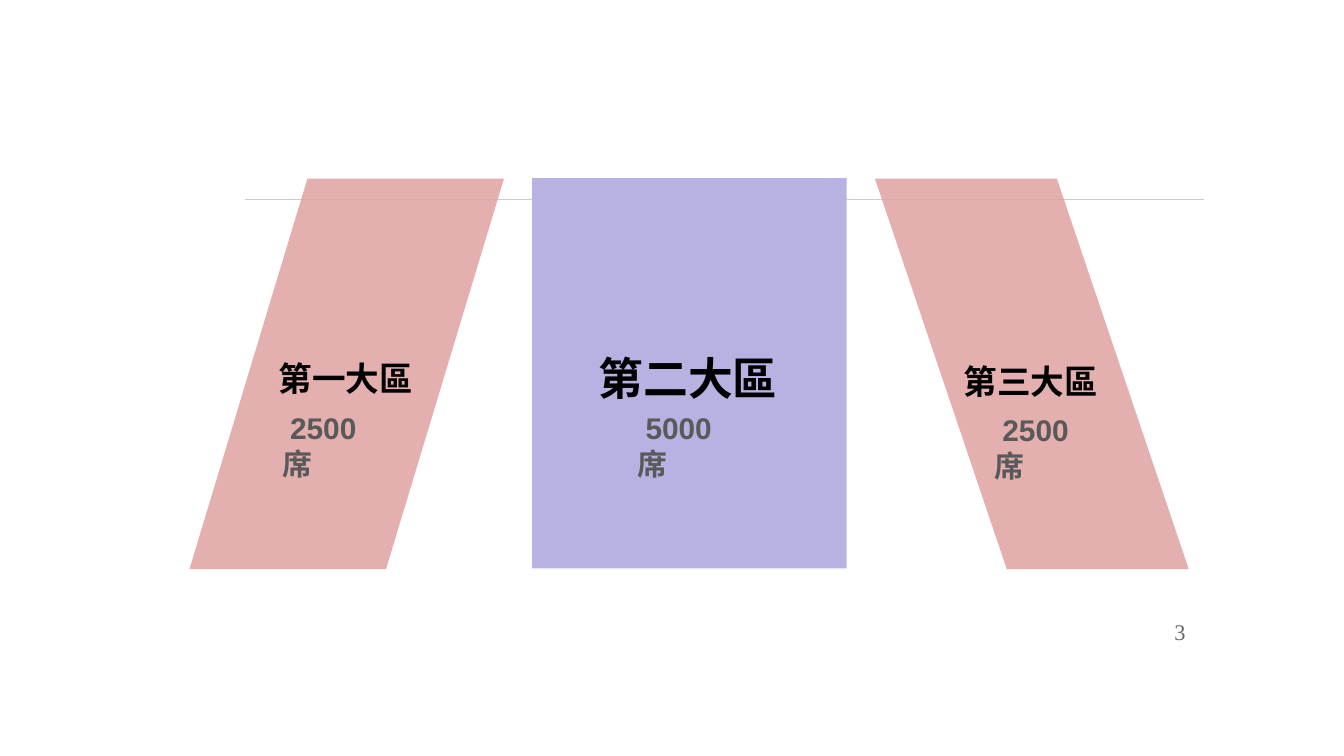
from lxml.etree import SubElement
from pptx import Presentation
from pptx.dml.color import RGBColor
from pptx.enum.shapes import MSO_CONNECTOR, MSO_SHAPE
from pptx.enum.text import MSO_ANCHOR
from pptx.oxml.ns import qn
from pptx.util import Pt

PX = 4572
CJK = "Noto Sans CJK TC"


def px(*lengths):
    return [length * PX for length in lengths]


def color(hex_string):
    return RGBColor.from_string(hex_string)


def add_text(slide, box, words, size, font_name, hex_color, bold=True,
             inset=(20, 10, 20, 10), indent=0, anchor=MSO_ANCHOR.TOP):
    frame = slide.shapes.add_textbox(*px(*box)).text_frame
    frame.word_wrap = True
    frame.vertical_anchor = anchor
    (frame.margin_left, frame.margin_top,
     frame.margin_right, frame.margin_bottom) = px(*inset)
    paragraph = frame.paragraphs[0]
    paragraph.text = words
    properties = paragraph._p.get_or_add_pPr()
    properties.set("marL", "0")
    properties.set("indent", str(indent * PX))
    font = paragraph.font
    font.size, font.bold, font.name = Pt(size), bold, font_name
    font.color.rgb = color(hex_color)
    SubElement(properties.find(qn("a:defRPr")), qn("a:ea"), typeface=CJK)


def add_rule(slide, left, top, width):
    rule = slide.shapes.add_connector(
        MSO_CONNECTOR.STRAIGHT, *px(left, top, left + width, top))
    rule.line.color.rgb = color("CCCCCC")
    rule.line.width = Pt(0.75)
    SubElement(rule._element.spPr, qn("a:effectLst"))


def add_zone(slide, box, preset, fill, name, name_box, name_size,
             seats, seats_box, slant=None, flipped=False, alpha=None):
    left, top = box[:2]
    area = slide.shapes.add_shape(preset, *px(*box))
    area.shadow.inherit = False
    area.line.fill.background()
    area.fill.solid()
    area.fill.fore_color.rgb = color(fill)
    if slant:
        area.adjustments[0] = slant
    if flipped:
        area._element.spPr.xfrm.set("flipV", "1")
    if alpha:
        tint = area._element.spPr.find(qn("a:solidFill"))[0]
        SubElement(tint, qn("a:alpha"), val=str(alpha * 1000))

    def inside(part):
        return (left + part[0], top + part[1], *part[2:])

    add_text(slide, inside(name_box), name, name_size, CJK, "000000")
    add_text(slide, inside(seats_box), seats, 16, "Arial", "595959",
             inset=(20, 10, 36, 10), indent=12)


def main():
    deck = Presentation()
    deck.slide_width, deck.slide_height = px(2000, 1125)
    slide = deck.slides.add_slide(deck.slide_layouts[6])
    add_rule(slide, 364, 297, 1428)
    add_text(slide, (1728, 897, 120, 86), "3", 12, "Times New Roman", "666666",
             bold=False, inset=(20, 20, 20, 20), anchor=MSO_ANCHOR.MIDDLE)
    add_zone(slide, (282, 266, 468, 581), MSO_SHAPE.PARALLELOGRAM, "DFA2A2",
             "第一大區", (113, 257, 242, 80), 18,
             "2500席", (118, 334, 196, 74), slant=0.375, alpha=85)
    add_zone(slide, (792, 265, 468, 581), MSO_SHAPE.RECTANGLE, "B8B2E3",
             "第二大區", (79, 247, 310, 100), 24,
             "5000席", (137, 335, 198, 74))
    add_zone(slide, (1302, 266, 467, 581), MSO_SHAPE.PARALLELOGRAM, "DFA2A2",
             "第三大區", (112, 261, 242, 80), 18,
             "2500席", (158, 337, 198, 74), slant=0.42, flipped=True, alpha=85)
    deck.save("out.pptx")


if __name__ == "__main__":
    main()
